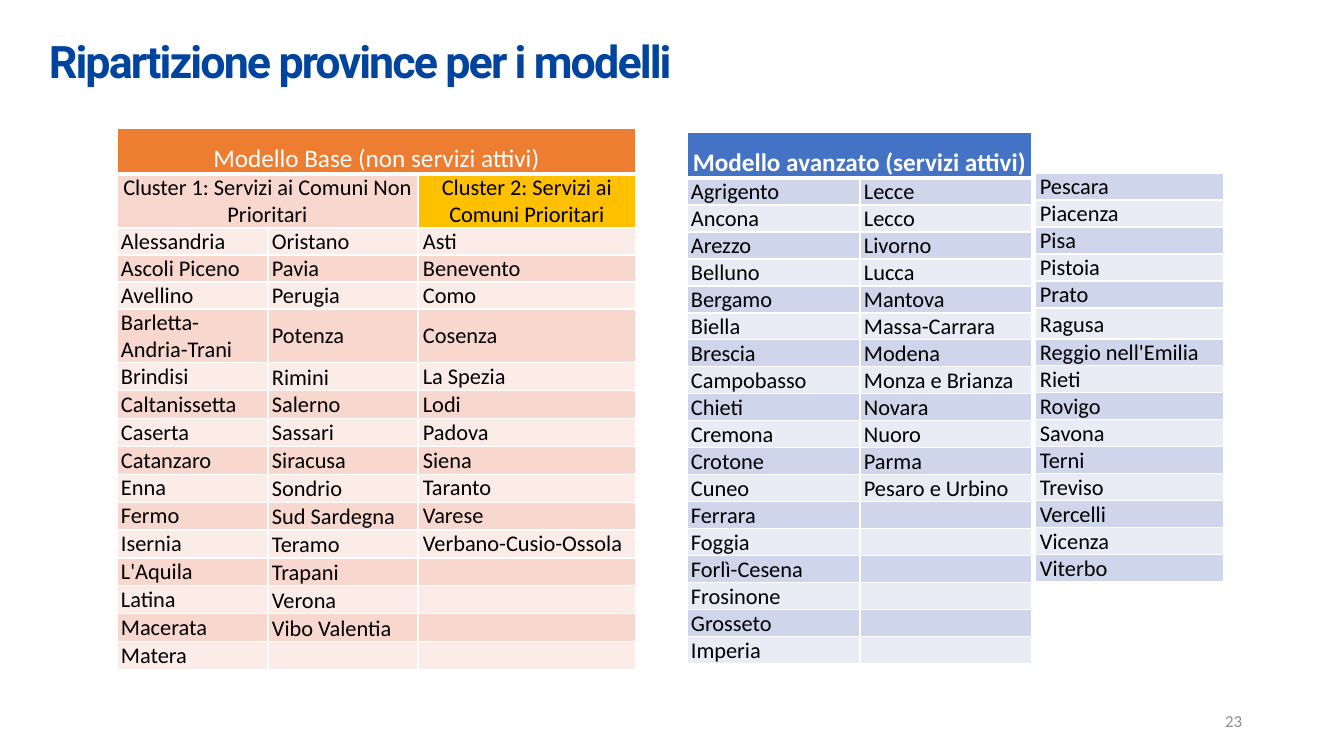
from itertools import zip_longest

from lxml import etree
from pptx import Presentation
from pptx.dml.color import RGBColor
from pptx.enum.text import MSO_ANCHOR, PP_ALIGN
from pptx.oxml.ns import qn
from pptx.util import Pt

MIDDLE, BOTTOM = MSO_ANCHOR.MIDDLE, MSO_ANCHOR.BOTTOM
LEFT, CENTER, RIGHT = PP_ALIGN.LEFT, PP_ALIGN.CENTER, PP_ALIGN.RIGHT
PX = 914400 / 100.8
BLANK_LAYOUT = 6
COLORS = {
    "title": "00449E", "page": "8C8C8C", "white": "FFFFFF", "black": "000000",
    "orange": "ED7D31", "rose": "F8D7CE", "pale rose": "FCECE8", "amber": "FFC000",
    "blue": "4472C4", "lilac": "CFD5EA", "pale lilac": "E9EBF5",
}
ROW_HEIGHT, HEADER_HEIGHT = 27, 46

TABLES = [
    {
        "box": (117, 128), "widths": [151, 150, 218], "anchor": MIDDLE,
        "header": ("Modello Base (non servizi attivi)", "orange", False),
        "clusters": [
            (0, 1, "Cluster 1: Servizi ai Comuni Non Prioritari", "rose"),
            (2, 2, "Cluster 2: Servizi ai Comuni Prioritari", "amber"),
        ],
        "bands": ("pale rose", "rose"), "insets": (4, 4, 5), "heights": {},
        "lowered": (1, 4),
        "columns": [
            ["Alessandria", "Ascoli Piceno", "Avellino", "Barletta-Andria-Trani",
             "Brindisi", "Caltanissetta", "Caserta", "Catanzaro", "Enna", "Fermo",
             "Isernia", "L'Aquila", "Latina", "Macerata", "Matera"],
            ["Oristano", "Pavia", "Perugia", "Potenza", "Rimini", "Salerno", "Sassari",
             "Siracusa", "Sondrio", "Sud Sardegna", "Teramo", "Trapani", "Verona",
             "Vibo Valentia"],
            ["Asti", "Benevento", "Como", "Cosenza", "La Spezia", "Lodi", "Padova",
             "Siena", "Taranto", "Varese", "Verbano-Cusio-Ossola"],
        ],
    },
    {
        "box": (687, 132), "widths": [173, 172], "anchor": BOTTOM,
        "header": ("Modello avanzato (servizi attivi)", "blue", True),
        "clusters": [], "bands": ("lilac", "pale lilac"), "insets": (4, 4),
        "heights": {}, "lowered": None,
        "columns": [
            ["Agrigento", "Ancona", "Arezzo", "Belluno", "Bergamo", "Biella", "Brescia",
             "Campobasso", "Chieti", "Cremona", "Crotone", "Cuneo", "Ferrara", "Foggia",
             "Forlì-Cesena", "Frosinone", "Grosseto", "Imperia"],
            ["Lecce", "Lecco", "Livorno", "Lucca", "Mantova", "Massa-Carrara", "Modena",
             "Monza e Brianza", "Novara", "Nuoro", "Parma", "Pesaro e Urbino"],
        ],
    },
    {
        "box": (1035, 173), "widths": [189], "anchor": BOTTOM,
        "header": None, "clusters": [], "bands": ("lilac", "pale lilac"),
        "insets": (5,), "heights": {5: 31}, "lowered": None,
        "columns": [
            ["Pescara", "Piacenza", "Pisa", "Pistoia", "Prato", "Ragusa",
             "Reggio nell'Emilia", "Rieti", "Rovigo", "Savona", "Terni", "Treviso",
             "Vercelli", "Vicenza", "Viterbo"],
        ],
    },
]


def px(length):
    return round(length * PX)


def style_cell(cell, text, fill, anchor=MIDDLE, align=LEFT, inset=4, top=0,
               size=16, color="black", bold=False, bottom_line=1):
    """Write the text of a cell and set its white borders, fill and margins."""
    properties = cell._tc.get_or_add_tcPr()
    for side in ("lnL", "lnR", "lnT", "lnB"):
        width = bottom_line if side == "lnB" else 1
        line = etree.SubElement(properties, qn("a:" + side), w=str(Pt(width)))
        solid = etree.SubElement(line, qn("a:solidFill"))
        etree.SubElement(solid, qn("a:srgbClr"), val=COLORS["white"])
    cell.fill.solid()
    cell.fill.fore_color.rgb = RGBColor.from_string(COLORS[fill])
    cell.margin_left = cell.margin_right = px(inset)
    cell.margin_top, cell.margin_bottom = px(top), 0
    cell.vertical_anchor = anchor
    paragraph = cell.text_frame.paragraphs[0]
    paragraph.alignment = align
    if text:
        paragraph.add_run().text = text
    else:
        etree.SubElement(paragraph._p, qn("a:endParaRPr"), sz=str(size * 100))
    font = paragraph.font
    font.name, font.size, font.bold = "Calibri", Pt(size), bold
    font.color.rgb = RGBColor.from_string(COLORS[color])


presentation = Presentation()
presentation.slide_width, presentation.slide_height = px(1344), px(756)
slide = presentation.slides.add_slide(presentation.slide_layouts[BLANK_LAYOUT])

# Title and page number
for text, box, align, name, size, color, bold in [
    ("Ripartizione province per i modelli", (39, 20, 1265, 81), LEFT,
     "Roboto", 32, "title", True),
    ("23", (950, 701, 302, 40), RIGHT, "Calibri", 12, "page", False),
]:
    frame = slide.shapes.add_textbox(*map(px, box)).text_frame
    frame.word_wrap = True
    frame.vertical_anchor = MIDDLE
    paragraph = frame.paragraphs[0]
    paragraph.alignment = align
    run = paragraph.add_run()
    run.text = text
    font = paragraph.font
    font.name, font.size, font.bold = name, Pt(size), bold
    font.color.rgb = RGBColor.from_string(COLORS[color])
    if name == "Roboto":
        run._r.get_or_add_rPr().set("spc", "-140")

# Province tables
for model in TABLES:
    provinces = list(zip_longest(*model["columns"], fillvalue=""))
    heights = [model["heights"].get(index, ROW_HEIGHT) for index in range(len(provinces))]
    if model["clusters"]:
        heights.insert(0, 2 * ROW_HEIGHT)
    if model["header"]:
        heights.insert(0, HEADER_HEIGHT)
    widths = model["widths"]
    table = slide.shapes.add_table(
        len(heights), len(widths), *map(px, model["box"]), px(sum(widths)), px(sum(heights))
    ).table
    table.first_row = table.horz_banding = False
    for column, width in zip(table.columns, widths):
        column.width = px(width)
    for row, height in zip(table.rows, heights):
        row.height = px(height)

    if model["header"]:
        text, fill, bold = model["header"]
        header = table.cell(0, 0)
        header.merge(table.cell(0, len(widths) - 1))
        style_cell(header, text, fill, align=CENTER, size=18, color="white",
                   bold=bold, bottom_line=3)
        header.text_frame.paragraphs[0].line_spacing = 1.5
    for first, last, text, fill in model["clusters"]:
        cluster = table.cell(1, first)
        if last > first:
            cluster.merge(table.cell(1, last))
        style_cell(cluster, text, fill, align=CENTER)

    first_row = len(heights) - len(provinces)
    for row_index, names in enumerate(provinces):
        for column_index, province in enumerate(names):
            lowered = (model["lowered"] and column_index == model["lowered"][0]
                       and row_index >= model["lowered"][1])
            style_cell(table.cell(first_row + row_index, column_index), province,
                       model["bands"][row_index % 2], model["anchor"],
                       inset=model["insets"][column_index], top=1 if lowered else 0)

presentation.save("out.pptx")
